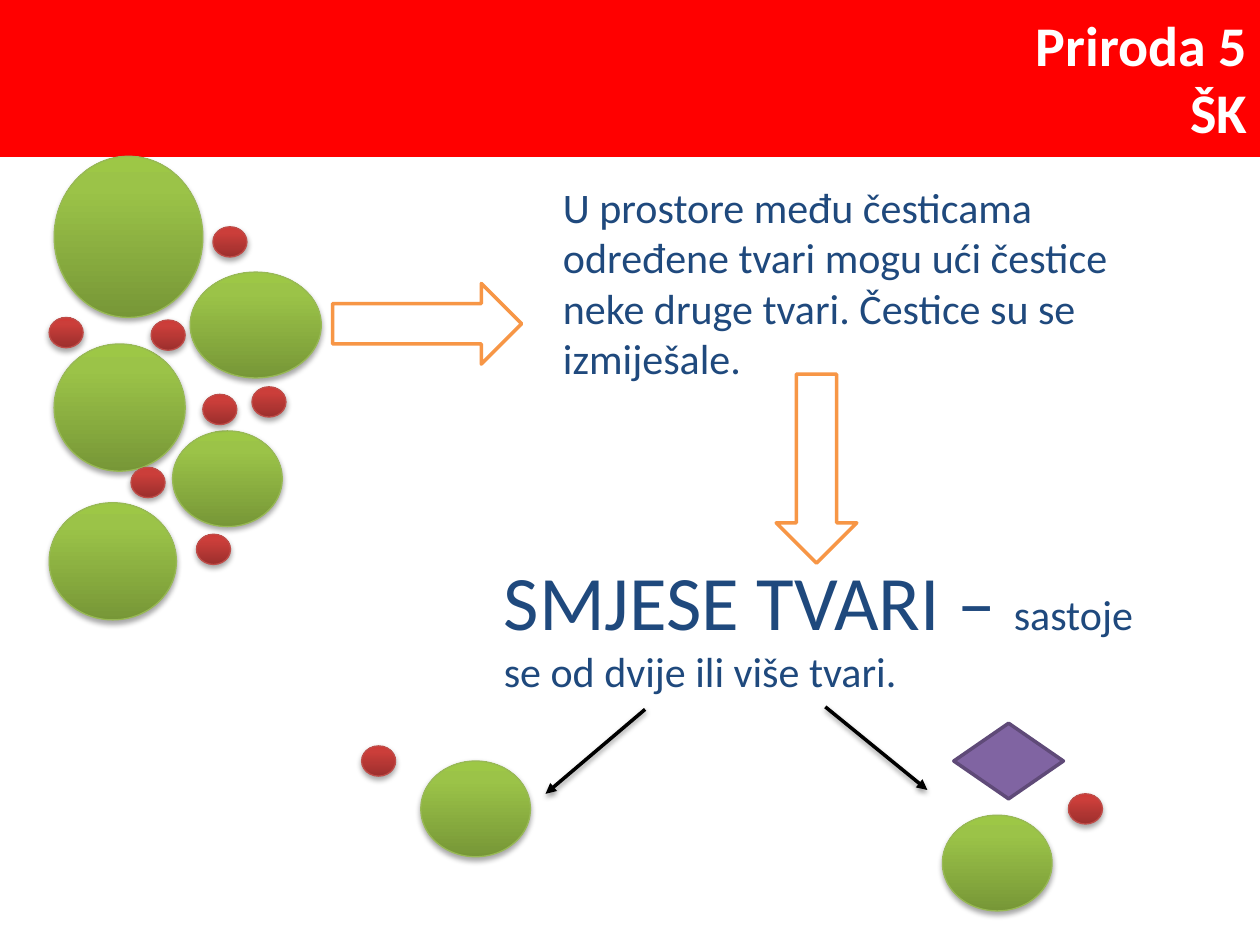
from copy import deepcopy

from lxml.etree import SubElement
from pptx import Presentation
from pptx.dml.color import RGBColor
from pptx.enum.shapes import MSO_CONNECTOR, MSO_SHAPE
from pptx.enum.text import MSO_ANCHOR, MSO_AUTO_SIZE, PP_ALIGN
from pptx.oxml.ns import qn
from pptx.util import Emu, Pt

GREEN = ("779737", "9BC348", "9DC746"), "98B955"
RED = ("9C2F2D", "CB3E3A", "CE3B37"), "BF4C48"
LARGE = [
    (43, 273, 104, 101), (151, 216, 104, 84), (39, 399, 101, 93),
    (137, 342, 87, 76), (43, 124, 118, 128), (748, 647, 87, 76),
    (334, 604, 87, 76),
]
SMALL = [
    (156, 424), (200, 307), (120, 254), (169, 180), (39, 252),
    (161, 313), (104, 371), (287, 592), (848, 630),
]


def px(n):
    return Emu(n * 9144)


def tint(code):
    return RGBColor.from_string(code)


class Board:
    """Draws styled elements on the current slide."""

    font = "Calibri"
    ink = "1F497D"

    def __init__(self, slide):
        self.slide = slide

    def shade(self, item, alpha, drop):
        props = item._element.spPr
        glow = SubElement(SubElement(props, qn("a:effectLst")), qn("a:outerShdw"),
                          blurRad="40000", dist=str(drop), dir="5400000", rotWithShape="0")
        black = SubElement(glow, qn("a:srgbClr"), val="000000")
        SubElement(black, qn("a:alpha"), val=str(alpha * 1000))

    def edge(self, item, color, width=2):
        item.line.color.rgb = tint(color)
        item.line.width = Pt(width)

    def style(self, run, size, color, bold=False):
        font = run.font
        font.name, font.size, font.bold = self.font, Pt(size), bold
        font.color.rgb = tint(color)

    def shape(self, kind, box, fill, line, turn=0):
        item = self.slide.shapes.add_shape(kind, *map(px, box))
        item.shadow.inherit = False
        item.fill.solid()
        item.fill.fore_color.rgb = tint(fill)
        self.edge(item, line)
        item.rotation = turn
        return item

    def ball(self, box, look):
        colors, rim = look
        item = self.slide.shapes.add_shape(MSO_SHAPE.OVAL, *map(px, box))
        item.fill.gradient()
        item.fill.gradient_angle = 90
        stops = item._element.spPr.find(".//" + qn("a:gsLst"))
        stops.append(deepcopy(stops[0]))
        for stop, spot, color in zip(item.fill.gradient_stops, (0, 0.8, 1), colors):
            stop.position = spot
            stop.color.rgb = tint(color)
        self.edge(item, rim, 0.75)
        self.shade(item, 35, 23000)

    def banner(self, box, text):
        item = self.shape(MSO_SHAPE.RECTANGLE, box, "FF0000", "FF0000")
        frame = item.text_frame
        frame.text = text
        frame.vertical_anchor = MSO_ANCHOR.MIDDLE
        for para in frame.paragraphs:
            para.alignment = PP_ALIGN.RIGHT
            self.style(para.runs[0], 32, "FFFFFF", True)

    def text(self, box, parts):
        frame = self.slide.shapes.add_textbox(*map(px, box)).text_frame
        frame.word_wrap = True
        frame.auto_size = MSO_AUTO_SIZE.SHAPE_TO_FIT_TEXT
        for words, size in parts:
            run = frame.paragraphs[0].add_run()
            run.text = words
            self.style(run, size, self.ink)

    def arrow(self, ends):
        item = self.slide.shapes.add_connector(MSO_CONNECTOR.STRAIGHT, *map(px, ends))
        self.edge(item, "000000")
        SubElement(item.line._get_or_add_ln(), qn("a:tailEnd"), type="triangle")
        self.shade(item, 38, 20000)


def main():
    deck = Presentation()
    deck.slide_width, deck.slide_height = px(1000), px(750)
    board = Board(deck.slides.add_slide(deck.slide_layouts[6]))

    board.banner((0, 0, 1000, 123), "Priroda 5\nŠK")
    for box in LARGE:
        board.ball(box, GREEN)
    for left, top in SMALL:
        board.ball((left, top, 27, 24), RED)

    for left, top, turn in ((264, 225, 0), (573, 340, 90)):
        board.shape(MSO_SHAPE.RIGHT_ARROW, (left, top, 150, 64), "FFFFFF", "F79646", turn)
    board.text((437, 139, 496, 172), [(
        "U prostore među česticama određene tvari mogu ući čestice "
        "neke druge tvari. Čestice su se izmiješale.", 24)])
    board.text((390, 434, 543, 125), [
        ("SMJESE TVARI – ", 44), ("sastoje se od dvije ili više tvari.", 24)])

    board.shape(MSO_SHAPE.DIAMOND, (757, 574, 87, 60), "8064A2", "5F4A78")
    for ends in ((512, 563, 433, 630), (655, 561, 736, 627)):
        board.arrow(ends)
    deck.save("out.pptx")


if __name__ == "__main__":
    main()
